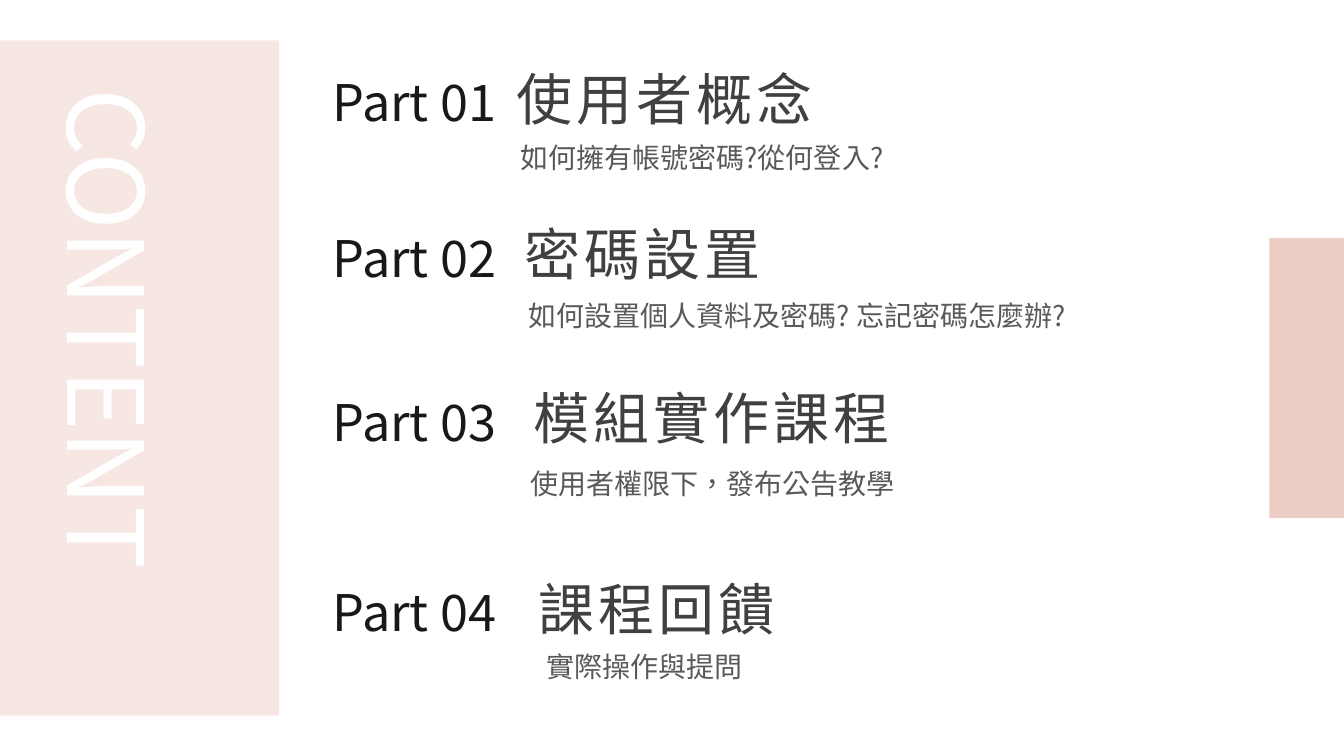
from pptx import Presentation
from pptx.dml.color import RGBColor
from pptx.enum.shapes import MSO_SHAPE as SHAPE
from pptx.enum.text import MSO_ANCHOR as ANCHOR, PP_ALIGN as ALIGN
from pptx.oxml.ns import qn
from pptx.util import Inches, Pt

FONT = "Noto Sans CJK SC"
BLUSH = RGBColor(0xF6, 0xE7, 0xE2)
ROSE = RGBColor(0xEC, 0xCE, 0xC4)
WHITE = RGBColor(0xFF, 0xFF, 0xFF)
INK = RGBColor(0x17, 0x19, 0x19)
CHARCOAL = RGBColor(0x40, 0x40, 0x40)
GRAY = RGBColor(0x59, 0x59, 0x59)

WIDTH, HEIGHT = 13.33, 7.5
PARTS_LEFT = 3.2
LABEL_SIZE = (2.12, 0.71)
HEADING_RISE = 0.07
TITLE_LENGTH, TITLE_DEPTH = 5.74, 1.51

# top, heading (text, dx, width, align), detail (text, dx, dy, width, height, spacing)
PARTS = [
    (0.66, ("使用者概念", 1.82, 3.71, ALIGN.LEFT),
     ("如何擁有帳號密碼?從何登入?", 1.86, 0.68, 4.35, 0.44, 1.0)),
    (2.2, ("密碼設置", 1.9, 6.36, ALIGN.LEFT),
     ("如何設置個人資料及密碼? 忘記密碼怎麼辦?", 1.94, 0.71, 7.02, 0.44, 1.0)),
    (3.83, ("模組實作課程", 1.82, 4.08, ALIGN.CENTER),
     ("使用者權限下，發布公告教學", 1.96, 0.58, 5.79, 0.55, 1.5)),
    (5.72, ("課程回饋", 1.94, 2.75, ALIGN.CENTER),
     ("實際操作與提問", 2.12, 0.67, 4.35, 0.44, 1.0)),
]


def add_block(s, box, color):
    sp = s.shapes.add_shape(SHAPE.RECTANGLE, *map(Inches, box))
    sp.shadow.inherit = False
    sp.fill.solid()
    sp.fill.fore_color.rgb = color
    sp.line.fill.background()


def write(tf, text, size, color, align=ALIGN.LEFT, spacing=1.0, tracking=0):
    tf.word_wrap = True
    p = tf.paragraphs[0]
    p.alignment = align
    p.line_spacing = spacing
    r = p.add_run()
    r.text = text
    r.font.name = FONT
    r.font.size = Pt(size)
    r.font.color.rgb = color
    rpr = r.font._element
    rpr.set("lang", "zh-TW")
    if tracking:
        rpr.set("spc", str(tracking * 100))
    east_asian = rpr.makeelement(qn("a:ea"), {"typeface": FONT})
    rpr.find(qn("a:latin")).addnext(east_asian)


def add_text(shapes, box, *args, **kwargs):
    write(shapes.add_textbox(*map(Inches, box)).text_frame, *args, **kwargs)


def add_sidebar(s, box):
    left, top, width, height = box
    add_block(s, box, BLUSH)
    title = s.shapes.title
    title.left = Inches(left + 1.09 - TITLE_LENGTH / 2)
    title.top = Inches(top + (height - TITLE_DEPTH) / 2)
    title.width, title.height = Inches(TITLE_LENGTH), Inches(TITLE_DEPTH)
    title.rotation = 90
    tf = title.text_frame
    tf.margin_left = tf.margin_right = tf.margin_top = tf.margin_bottom = 0
    tf.vertical_anchor = ANCHOR.MIDDLE
    write(tf, "CONTENT", 75, WHITE)
    s.shapes._spTree.append(title._element)


def add_part(s, left, top, label, heading, detail):
    shapes = s.shapes.add_group_shape().shapes
    add_text(shapes, (left, top, *LABEL_SIZE), label, 36, INK)
    text, dx, width, align = heading
    add_text(shapes, (left + dx, top - HEADING_RISE, width, 0.77),
             text, 40, CHARCOAL, align, tracking=3)
    text, dx, dy, width, height, spacing = detail
    add_text(shapes, (left + dx, top + dy, width, height),
             text, 20, GRAY, spacing=spacing)


def main():
    prs = Presentation()
    prs.slide_width, prs.slide_height = Inches(WIDTH), Inches(HEIGHT)
    s = prs.slides.add_slide(prs.slide_layouts[5])
    add_sidebar(s, (0, 0.4, 2.77, 6.7))
    add_block(s, (12.59, 2.36, 0.74, 2.78), ROSE)
    for number, (top, heading, detail) in enumerate(PARTS, 1):
        add_part(s, PARTS_LEFT, top, f"Part {number:02}", heading, detail)
    prs.save("out.pptx")


if __name__ == "__main__":
    main()
